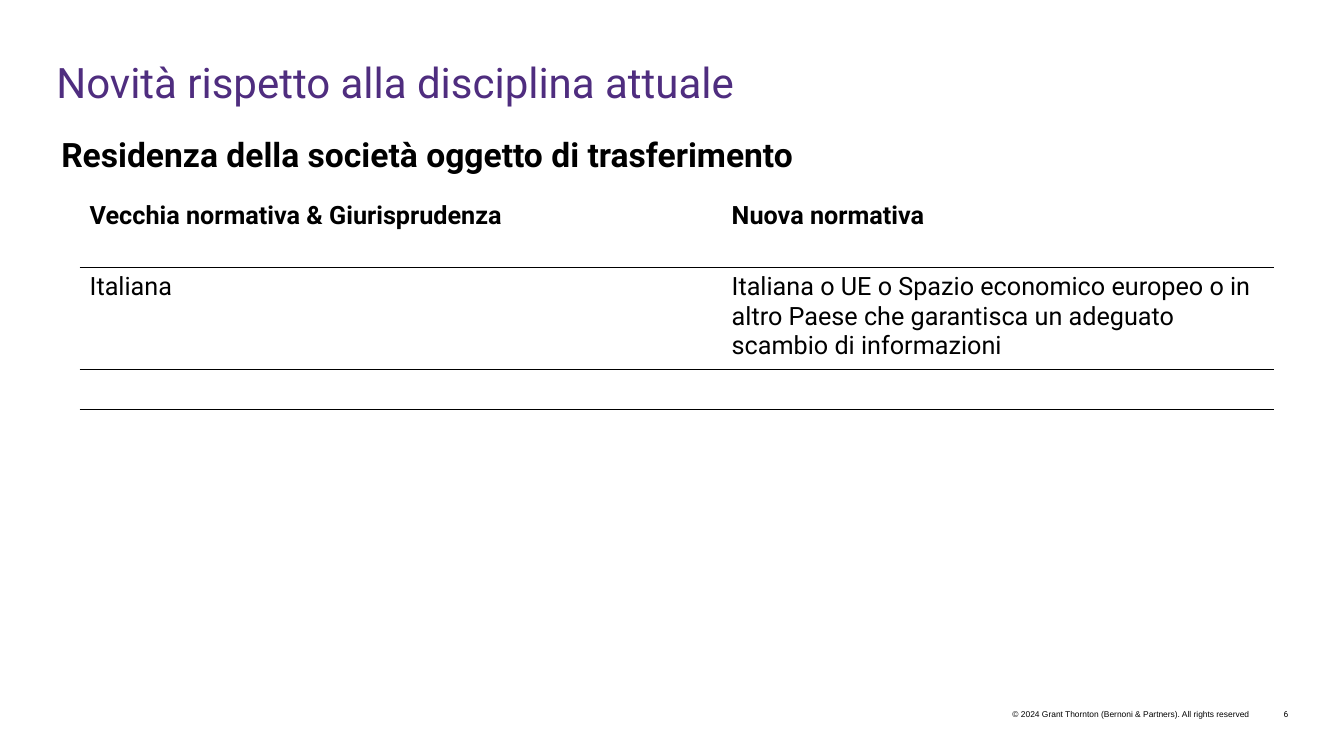
from dataclasses import dataclass

from pptx import Presentation
from pptx.dml.color import RGBColor
from pptx.enum.text import MSO_ANCHOR, PP_ALIGN
from pptx.oxml import parse_xml
from pptx.oxml.ns import nsdecls
from pptx.util import Pt

LEFT, RIGHT = PP_ALIGN.LEFT, PP_ALIGN.RIGHT
TOP, BOTTOM = MSO_ANCHOR.TOP, MSO_ANCHOR.BOTTOM


@dataclass(frozen=True)
class Theme:
    purple: str = "4F2D7F"
    black: str = "000000"
    font: str = "Roboto"
    footer_font: str = "Arial"
    title: int = 30
    heading: int = 24
    body: int = 18
    footer: int = 6
    thin: float = 0.25
    thick: float = 1


THEME = Theme()
INSETS = (7.2, 3.6, 7.2, 3.6)
NO_INSETS = (0, 0, 0, 0)


def write_text(frame, text, size=THEME.body, font=THEME.font, color=THEME.black,
               bold=False, align=LEFT, after=6, line=None):
    para = frame.paragraphs[0]
    para.alignment = align
    para.space_after = Pt(after)
    if line:
        para.line_spacing = Pt(line)
    para.font.size = Pt(size)
    if text:
        span = para.add_run()
        span.text = text
        span.font.name = font
        span.font.size = Pt(size)
        span.font.bold = bold
        span.font.color.rgb = RGBColor.from_string(color)


def add_text(page, place, text, insets=INSETS, anchor=TOP, **style):
    box = page.shapes.add_textbox(*(Pt(value) for value in place))
    frame = box.text_frame
    frame.word_wrap = True
    frame.vertical_anchor = anchor
    (frame.margin_left, frame.margin_top,
     frame.margin_right, frame.margin_bottom) = (Pt(value) for value in insets)
    write_text(frame, text, **style)


def set_borders(cell, top, bottom):
    properties = cell._tc.get_or_add_tcPr()
    for side, width in (("L", 0), ("R", 0), ("T", top), ("B", bottom)):
        fill = (f'<a:solidFill><a:srgbClr val="{THEME.black}"/></a:solidFill>'
                if width else "<a:noFill/>")
        properties.append(parse_xml(
            f'<a:ln{side} {nsdecls("a")} w="{Pt(width)}">{fill}</a:ln{side}>'))


def add_comparison(page, place, widths, heights, rows):
    frame = page.shapes.add_table(
        len(rows), len(widths), *(Pt(value) for value in place))
    table = frame.table
    table.first_row = table.horz_banding = False
    for column, width in zip(table.columns, widths):
        column.width = Pt(width)
    for row, height in zip(table.rows, heights):
        row.height = Pt(height)
    rules = [0] + [THEME.thin] * (len(rows) - 1) + [THEME.thick]
    for i, texts in enumerate(rows):
        for j, text in enumerate(texts):
            cell = table.cell(i, j)
            set_borders(cell, rules[i], rules[i + 1])
            cell.fill.background()
            write_text(cell.text_frame, text, bold=i == 0)


def main():
    deck = Presentation()
    deck.slide_width, deck.slide_height = Pt(960), Pt(540)
    page = deck.slides.add_slide(deck.slide_layouts[6])
    add_text(page, (40.3, 40.3, 730, 36), "Novità rispetto alla disciplina attuale",
             insets=NO_INSETS, size=THEME.title, color=THEME.purple, after=0, line=36)
    add_text(page, (892, 506.2, 28.2, 7.2), "6", insets=NO_INSETS, anchor=BOTTOM,
             size=THEME.footer, align=RIGHT)
    add_text(page, (581.8, 503.3, 317.5, 16.6),
             "© 2024 Grant Thornton (Bernoni & Partners). All rights reserved",
             size=THEME.footer, font=THEME.footer_font, align=RIGHT)
    add_text(page, (36.7, 92.2, 883.4, 160),
             "Residenza della società oggetto di trasferimento",
             size=THEME.heading, bold=True)
    add_comparison(page, (56.9, 140.4, 853.2, 151.2), (458.6, 394.6), (50.4, 72.8, 28), [
        ("Vecchia normativa & Giurisprudenza", "Nuova normativa"),
        ("Italiana", "Italiana o UE o Spazio economico europeo o in altro Paese "
                     "che garantisca un adeguato scambio di informazioni"),
        ("", ""),
    ])
    deck.save("out.pptx")


if __name__ == "__main__":
    main()
